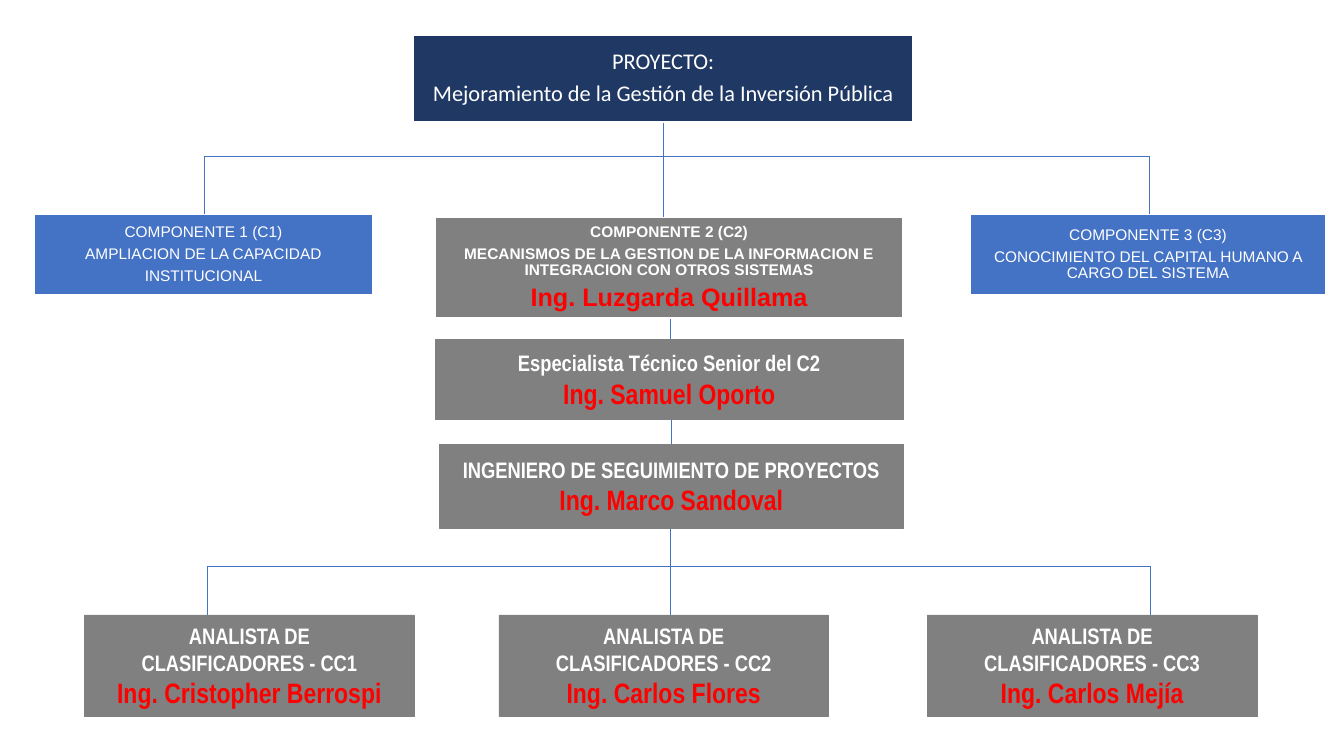
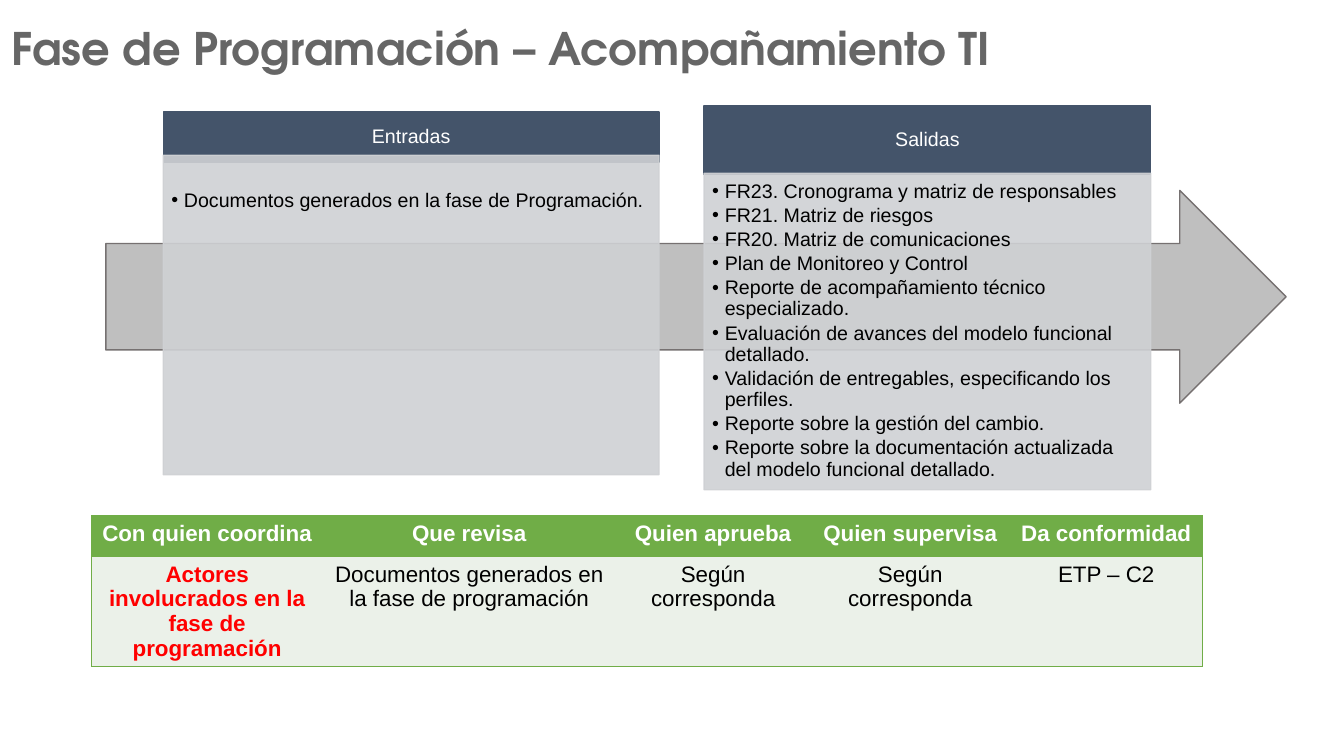
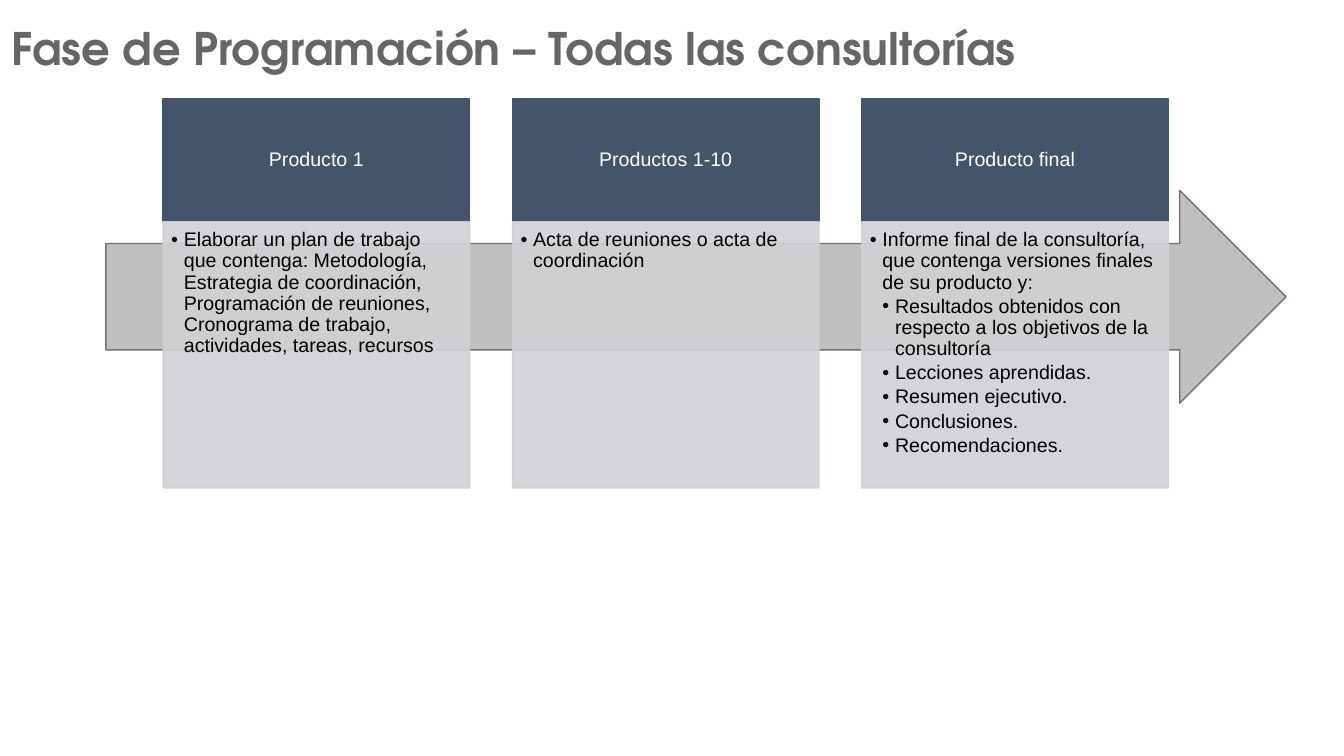
import lxml.etree
import pptx
import pptx.dml.color
import pptx.enum.shapes
import pptx.enum.text
import pptx.oxml.ns
import pptx.util

Pt = pptx.util.Pt
qn = pptx.oxml.ns.qn
ALIGN = pptx.enum.text.PP_ALIGN
ANCHOR = pptx.enum.text.MSO_ANCHOR
SHAPE = pptx.enum.shapes.MSO_SHAPE

COLORS = {
    "white": "FFFFFF", "black": "000000", "red": "FF0000",
    "navy": "203864", "blue": "4472C4", "gray": "808080",
    "slate": "44546A", "panel": "CFD1D4", "title": "666666",
    "arrow": "BFBFBF", "arrow_edge": "767171",
    "green": "70AD47", "pale_green": "EBF1E9",
}
PANEL_OPACITY = 90
NO_TABLE_STYLE = "{2D5ABB26-0587-4C30-8999-92F81FD0307C}"


def rgb(name):
    return pptx.dml.color.RGBColor.from_string(COLORS[name])


class Deck:
    """Holds the shared style and the slide being built."""

    def __init__(self):
        self.presentation = pptx.Presentation()
        self.presentation.slide_width = Pt(960)
        self.presentation.slide_height = Pt(540)
        self.slide = None

    def new_slide(self, title=None):
        layout = self.presentation.slide_layouts[5 if title else 6]
        self.slide = self.presentation.slides.add_slide(layout)
        if title:
            shape = self.slide.shapes.title
            shape.left, shape.top = Pt(0.72), Pt(-2.88)
            shape.width, shape.height = Pt(959), Pt(73.4)
            self.frame(shape, (7.2, 7.2, 7.2, 7.2))
            paragraph = shape.text_frame.paragraphs[0]
            paragraph.alignment = ALIGN.LEFT
            self.run(paragraph, title, 32, "title", "TeX Gyre Adventor", True)

    def frame(self, shape, insets, anchor=ANCHOR.MIDDLE):
        frame = shape.text_frame
        frame.word_wrap = True
        frame.auto_size = pptx.enum.text.MSO_AUTO_SIZE.NONE
        frame.vertical_anchor = anchor
        (frame.margin_left, frame.margin_top,
         frame.margin_right, frame.margin_bottom) = map(Pt, insets)

    def run(self, paragraph, text, size, color, font="Arial", bold=False):
        run = paragraph.add_run()
        run.text = text
        run.font.name, run.font.size, run.font.bold = font, Pt(size), bold
        run.font.color.rgb = rgb(color)

    def paragraph(self, frame, index):
        return frame.add_paragraph() if index else frame.paragraphs[0]

    def shape(self, box, fill, edge, width=1, kind=SHAPE.RECTANGLE, opacity=100):
        shape = self.slide.shapes.add_shape(kind, *map(Pt, box))
        shape.shadow.inherit = False
        shape.fill.solid()
        shape.fill.fore_color.rgb = rgb(fill)
        shape.line.color.rgb = rgb(edge)
        shape.line.width = Pt(width)
        if opacity < 100:
            for color in shape._element.spPr.iter(qn("a:srgbClr")):
                alpha = lxml.etree.SubElement(color, qn("a:alpha"))
                alpha.set("val", str(opacity * 1000))
        return shape

    def label(self, shape, lines, insets, spacing=None, after=0):
        """Centred lines, each (text, size, color, font, bold)."""
        self.frame(shape, insets)
        for index, line in enumerate(lines):
            paragraph = self.paragraph(shape.text_frame, index)
            paragraph.alignment = ALIGN.CENTER
            if spacing:
                paragraph.line_spacing = spacing
            paragraph.space_after = Pt(round(after * line[1], 2))
            self.run(paragraph, *line)

    def component(self, box, fill, lines):
        shape = self.shape(box, fill, "white")
        self.label(shape, lines, (0.72,) * 4, 0.9, 0.35)

    def role(self, box, role_lines, person):
        shape = self.shape(box, "gray", "gray", 0.25)
        lines = [(text, 16, "white", "Arial Narrow", True) for text in role_lines]
        lines.append((person, 20, "red", "Arial Narrow", True))
        self.label(shape, lines, (2.16,) * 4)

    def line(self, *ends):
        connector = self.slide.shapes.add_connector(
            pptx.enum.shapes.MSO_CONNECTOR.STRAIGHT, *map(Pt, ends))
        connector.line.color.rgb = rgb("blue")
        connector.line.width = Pt(0.5)
        lxml.etree.SubElement(connector._element.spPr, qn("a:effectLst"))

    def fork(self, trunk, left, right, top, bus, bottom):
        self.line(left, bus, right, bus)
        self.line(trunk, top, trunk, bottom)
        for x in (left, right):
            self.line(x, bus, x, bottom)

    def process_arrow(self):
        self.shape((75.6, 136, 843.1, 152), "arrow", "arrow_edge",
                   kind=SHAPE.RIGHT_ARROW)

    def panel(self, left, width, top, head_height, body_top, body_height,
              heading, items, top_inset=5.76):
        """Header block over a translucent list; items are (level, text)."""
        header = self.shape((left, top, width, head_height), "slate", "slate")
        self.label(header, [(heading, 14, "white")],
                   (7.92, 4.32, 7.92, 4.32), 0.9, 0.35)
        body = self.shape((left, body_top, width, body_height), "panel", "panel",
                          opacity=PANEL_OPACITY)
        self.frame(body, (5.76, top_inset, 7.92, 8.64), ANCHOR.TOP)
        for index, (level, text) in enumerate(items):
            paragraph = self.paragraph(body.text_frame, index)
            paragraph.level = level
            paragraph.alignment = ALIGN.LEFT
            paragraph.line_spacing = 0.9
            paragraph.space_after = Pt(2.1)
            properties = paragraph._p.get_or_add_pPr()
            properties.set("marL", str(Pt(9 * level)))
            properties.set("indent", str(Pt(-9)))
            lxml.etree.SubElement(properties, qn("a:buFont")).set("typeface", "Arial")
            lxml.etree.SubElement(properties, qn("a:buChar")).set("char", "•")
            self.run(paragraph, text, 14, "black")

    def cell_border(self, cell, side):
        properties = cell._tc.get_or_add_tcPr()
        edge = lxml.etree.SubElement(properties, qn("a:ln" + side), w=str(Pt(1)))
        fill = lxml.etree.SubElement(edge, qn("a:solidFill"))
        lxml.etree.SubElement(fill, qn("a:srgbClr"), val=COLORS["green"])

    def table(self, left, top, widths, heights, rows):
        table = self.slide.shapes.add_table(
            len(rows), len(widths), Pt(left), Pt(top),
            Pt(sum(widths)), Pt(sum(heights))).table
        table.horz_banding = False
        table._tbl.tblPr.find(qn("a:tableStyleId")).text = NO_TABLE_STYLE
        for column, width in zip(table.columns, widths):
            column.width = Pt(width)
        for r, texts in enumerate(rows):
            table.rows[r].height = Pt(heights[r])
            for c, text in enumerate(texts):
                cell = table.cell(r, c)
                sides = {0: "LTB", len(widths) - 1: "RTB"}.get(c, "TB")
                for side in sides:
                    self.cell_border(cell, side)
                cell.fill.solid()
                cell.fill.fore_color.rgb = rgb("pale_green" if r else "green")
                paragraph = cell.text_frame.paragraphs[0]
                paragraph.alignment = ALIGN.CENTER
                color = "white" if r == 0 else "black" if c else "red"
                self.run(paragraph, text, 16, color, bold=color != "black")


def organization_chart(deck):
    deck.new_slide()

    # Connections
    deck.fork(473.8, 146.2, 821, 84.2, 111.6, 160.6)
    deck.line(478.8, 224.6, 478.8, 242.6)
    deck.line(479.5, 298.8, 479.5, 317.5)
    deck.fork(479, 148.3, 821.5, 377.3, 404.6, 441)

    # Project and components
    deck.component((295.2, 25.2, 357.1, 61.9), "navy", [
        ("PROYECTO:", 16, "white", "Calibri"),
        ("Mejoramiento de la Gestión de la Inversión Pública", 16, "white", "Calibri")])
    deck.component((24.5, 153.4, 241.9, 56.9), "blue", [
        (text, 11, "white") for text in (
            "COMPONENTE 1 (C1)", "AMPLIACION DE LA CAPACIDAD", "INSTITUCIONAL")])
    deck.component((311, 155.5, 334.1, 71.6), "gray", [
        ("COMPONENTE 2 (C2)", 11, "white", "Arial", True),
        ("MECANISMOS DE LA GESTION DE LA INFORMACION E INTEGRACION CON OTROS SISTEMAS",
         11, "white", "Arial", True),
        ("Ing. Luzgarda Quillama", 18, "red", "Arial", True)])
    deck.component((693.4, 153.4, 253.4, 56.9), "blue", [
        (text, 11, "white") for text in (
            "COMPONENTE 3 (C3)", "CONOCIMIENTO DEL CAPITAL HUMANO A CARGO DEL SISTEMA")])

    # Team
    deck.role((311, 242.6, 334.1, 56.9),
              ["Especialista Técnico Senior del C2"], "Ing. Samuel Oporto")
    deck.role((313.9, 317.5, 331.2, 59.8),
              ["INGENIERO DE SEGUIMIENTO DE PROYECTOS"], "Ing. Marco Sandoval")
    analysts = [(60.5, "Ing. Cristopher Berrospi"), (356.4, "Ing. Carlos Flores"),
                (662.4, "Ing. Carlos Mejía")]
    for number, (left, person) in enumerate(analysts, 1):
        deck.role((left, 439.2, 235.4, 72.7),
                  ["ANALISTA DE", f"CLASIFICADORES - CC{number}"], person)


def support_phase(deck):
    deck.new_slide("Fase de Programación – Acompañamiento TI")
    deck.process_arrow()

    # Inputs and outputs
    deck.panel(116.6, 354.2, 79.9, 36, 110.9, 228.2, "Entradas",
               [(1, "Documentos generados en la fase de Programación.")],
               top_inset=25.3)
    outputs = [
        "FR23. Cronograma y matriz de responsables",
        "FR21. Matriz de riesgos",
        "FR20. Matriz de comunicaciones",
        "Plan de Monitoreo y Control",
        "Reporte de acompañamiento técnico especializado.",
        "Evaluación de avances del modelo funcional detallado.",
        "Validación de entregables, especificando los perfiles.",
        "Reporte sobre la gestión del cambio.",
        "Reporte sobre la documentación actualizada del modelo funcional detallado.",
    ]
    deck.panel(503, 319, 75.6, 49, 123.8, 226.1, "Salidas",
               [(1, text) for text in outputs])

    # Responsibilities
    deck.table(65.5, 368.6, (164.9, 209.5, 139, 142.6, 137.5), (29.2, 78.5), [
        ("Con quien coordina", "Que revisa", "Quien aprueba",
         "Quien supervisa", "Da conformidad"),
        ("Actores involucrados en la fase de programación",
         "Documentos generados en la fase de programación",
         "Según corresponda", "Según corresponda", "ETP – C2")])


def consulting_phase(deck):
    deck.new_slide("Fase de Programación – Todas las consultorías")
    deck.process_arrow()

    # Products, equally spaced
    products = [
        ("Producto 1", [
            (1, "Elaborar un plan de trabajo que contenga: Metodología, "
                "Estrategia de coordinación, Programación de reuniones, "
                "Cronograma de trabajo, actividades, tareas, recursos")]),
        ("Productos 1-10", [(1, "Acta de reuniones o acta de coordinación")]),
        ("Producto final", [
            (1, "Informe final de la consultoría, que contenga versiones "
                "finales de su producto y:"),
            (2, "Resultados obtenidos con respecto a los objetivos de la consultoría"),
            (2, "Lecciones aprendidas."),
            (2, "Resumen ejecutivo."),
            (2, "Conclusiones."),
            (2, "Recomendaciones.")]),
    ]
    for index, (heading, items) in enumerate(products):
        deck.panel(116.6 + 249.5 * index, 218.9, 70.6, 87.8, 158.4, 190.1,
                   heading, items)


def main():
    deck = Deck()
    organization_chart(deck)
    support_phase(deck)
    consulting_phase(deck)
    deck.presentation.save("out.pptx")


if __name__ == "__main__":
    main()
